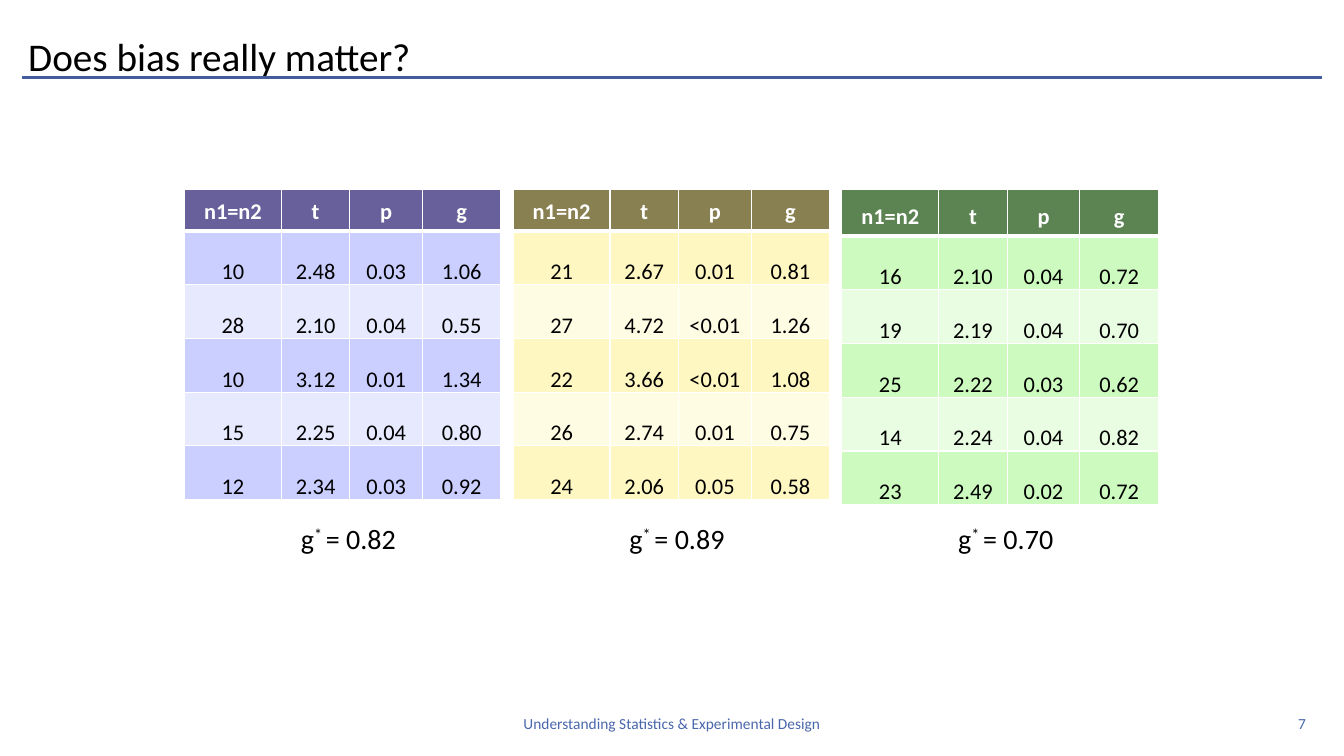
from lxml import etree
from pptx import Presentation
from pptx.dml.color import RGBColor
from pptx.enum.shapes import MSO_CONNECTOR, MSO_SHAPE
from pptx.enum.text import MSO_ANCHOR, MSO_AUTO_SIZE, PP_ALIGN
from pptx.oxml.ns import qn
from pptx.util import Pt

EMU_PER_PX = 9144  # 100 px to the inch
LEFT, CENTER, RIGHT = PP_ALIGN.LEFT, PP_ALIGN.CENTER, PP_ALIGN.RIGHT
MIDDLE, BOTTOM = MSO_ANCHOR.MIDDLE, MSO_ANCHOR.BOTTOM
FONT = "Calibri"
BLACK, WHITE, FOOTER_BLUE, RULE_BLUE = "000000", "FFFFFF", "4A66AC", "435C9B"

TABLE_LEFT, TABLE_TOP, TABLE_STEP = 183, 188, 326
COLUMN_WIDTHS = [96, 68, 72, 78]
ROW_HEIGHT = 53
HEADINGS = ["n1=n2", "t", "p", "g"]
# Each study: header height, (header, odd row, even row) colours, mean g, rows
STUDIES = [
    (41, ("67609A", "CACFFF", "E7EAFF"), "0.82", [
        ("10", "2.48", "0.03", "1.06"),
        ("28", "2.10", "0.04", "0.55"),
        ("10", "3.12", "0.01", "1.34"),
        ("15", "2.25", "0.04", "0.80"),
        ("12", "2.34", "0.03", "0.92"),
    ]),
    (41, ("888050", "FFF7C1", "FFFCE4"), "0.89", [
        ("21", "2.67", "0.01", "0.81"),
        ("27", "4.72", "<0.01", "1.26"),
        ("22", "3.66", "<0.01", "1.08"),
        ("26", "2.74", "0.01", "0.75"),
        ("24", "2.06", "0.05", "0.58"),
    ]),
    (46, ("5B8452", "CDFBBF", "E9FDE3"), "0.70", [
        ("16", "2.10", "0.04", "0.72"),
        ("19", "2.19", "0.04", "0.70"),
        ("25", "2.22", "0.03", "0.62"),
        ("14", "2.24", "0.04", "0.82"),
        ("23", "2.49", "0.02", "0.72"),
    ]),
]


def px(*lengths):
    return [length * EMU_PER_PX for length in lengths]


def color(value):
    return RGBColor.from_string(value)


def add_run(paragraph, text, size, text_color, bold=False, superscript=False):
    run = paragraph.add_run()
    run.text = text
    run.font.name = FONT
    run.font.size = Pt(size)
    run.font.bold = bold
    run.font.color.rgb = color(text_color)
    if superscript:
        run.font._element.set("baseline", "30000")


def format_frame(text_frame, anchor, alignment):
    """Set the frame's layout and return its first paragraph."""
    text_frame.word_wrap = True
    text_frame.vertical_anchor = anchor
    paragraph = text_frame.paragraphs[0]
    paragraph.alignment = alignment
    return paragraph


def add_title(slide, text):
    title = slide.shapes.title
    title.left, title.top, title.width, title.height = px(18, 19, 1206, 65)
    paragraph = format_frame(title.text_frame, BOTTOM, LEFT)
    add_run(paragraph, text, 28, BLACK)


def add_title_rule(slide):
    rule = slide.shapes.add_connector(MSO_CONNECTOR.STRAIGHT, *px(22, 77, 1311, 77))
    rule.line.color.rgb = color(RULE_BLUE)
    rule.line.width = Pt(2.25)
    etree.SubElement(rule._element.spPr, qn("a:effectLst"))


def add_footer(slide, text, page_number):
    page = slide.shapes.add_shape(MSO_SHAPE.RECTANGLE, *px(1167, 698, 138, 40))
    page.shadow.inherit = False
    page.fill.solid()
    page.fill.fore_color.rgb = color(WHITE)
    page.line.fill.background()
    footer = slide.shapes.add_textbox(*px(326, 698, 681, 40))
    for shape, content, alignment in ((page, page_number, RIGHT), (footer, text, CENTER)):
        paragraph = format_frame(shape.text_frame, MIDDLE, alignment)
        add_run(paragraph, content, 11, FOOTER_BLUE)


def set_border(cell, side, width):
    line = etree.SubElement(cell._tc.get_or_add_tcPr(), qn(f"a:ln{side}"), w=str(Pt(width)))
    fill = etree.SubElement(line, qn("a:solidFill"))
    etree.SubElement(fill, qn("a:srgbClr"), val=WHITE)


def format_cell(cell, text, row_index, fill_color):
    is_header = row_index == 0
    set_border(cell, "L", 1)
    set_border(cell, "R", 1)
    set_border(cell, "T", 3 if row_index == 1 else 1)
    set_border(cell, "B", 3 if is_header else 1)
    cell.fill.solid()
    cell.fill.fore_color.rgb = color(fill_color)
    cell.vertical_anchor = BOTTOM
    paragraph = cell.text_frame.paragraphs[0]
    paragraph.alignment = CENTER
    if not is_header:
        cell.margin_left, cell.margin_top, cell.margin_right, cell.margin_bottom = px(7, 0, 7, 0)
        paragraph.line_spacing = 2.0
    add_run(paragraph, text, 16, WHITE if is_header else BLACK, bold=is_header)


def add_study_table(slide, left, header_height, colors, rows):
    header_color, odd_color, even_color = colors
    row_heights = [header_height] + [ROW_HEIGHT] * len(rows)
    table = slide.shapes.add_table(
        len(row_heights), len(COLUMN_WIDTHS),
        *px(left, TABLE_TOP, sum(COLUMN_WIDTHS), sum(row_heights))).table
    table.horz_banding = False
    for column, width in zip(table.columns, px(*COLUMN_WIDTHS)):
        column.width = width
    for row, height in zip(table.rows, px(*row_heights)):
        row.height = height
    for row_index, values in enumerate([HEADINGS] + rows):
        band_color = odd_color if row_index % 2 else even_color
        fill_color = band_color if row_index else header_color
        for column_index, value in enumerate(values):
            format_cell(table.cell(row_index, column_index), value, row_index, fill_color)


def add_mean_effect(slide, left, value):
    box = slide.shapes.add_textbox(*px(left, 512, 117, 44))
    paragraph = format_frame(box.text_frame, MSO_ANCHOR.TOP, CENTER)
    box.text_frame.word_wrap = False
    box.text_frame.auto_size = MSO_AUTO_SIZE.SHAPE_TO_FIT_TEXT
    add_run(paragraph, "g", 20, BLACK)
    add_run(paragraph, "* ", 20, BLACK, superscript=True)
    add_run(paragraph, f"= {value}", 20, BLACK)


def main():
    presentation = Presentation()
    presentation.slide_width, presentation.slide_height = px(1333, 750)
    slide = presentation.slides.add_slide(presentation.slide_layouts.get_by_name("Title Only"))
    add_title(slide, "Does bias really matter?")
    add_title_rule(slide)
    add_footer(slide, "Understanding Statistics & Experimental Design", "7")
    for index, (header_height, colors, mean_effect, rows) in enumerate(STUDIES):
        left = TABLE_LEFT + index * TABLE_STEP
        add_study_table(slide, left, header_height, colors, rows)
        add_mean_effect(slide, left + 104, mean_effect)
    presentation.save("out.pptx")


if __name__ == "__main__":
    main()
